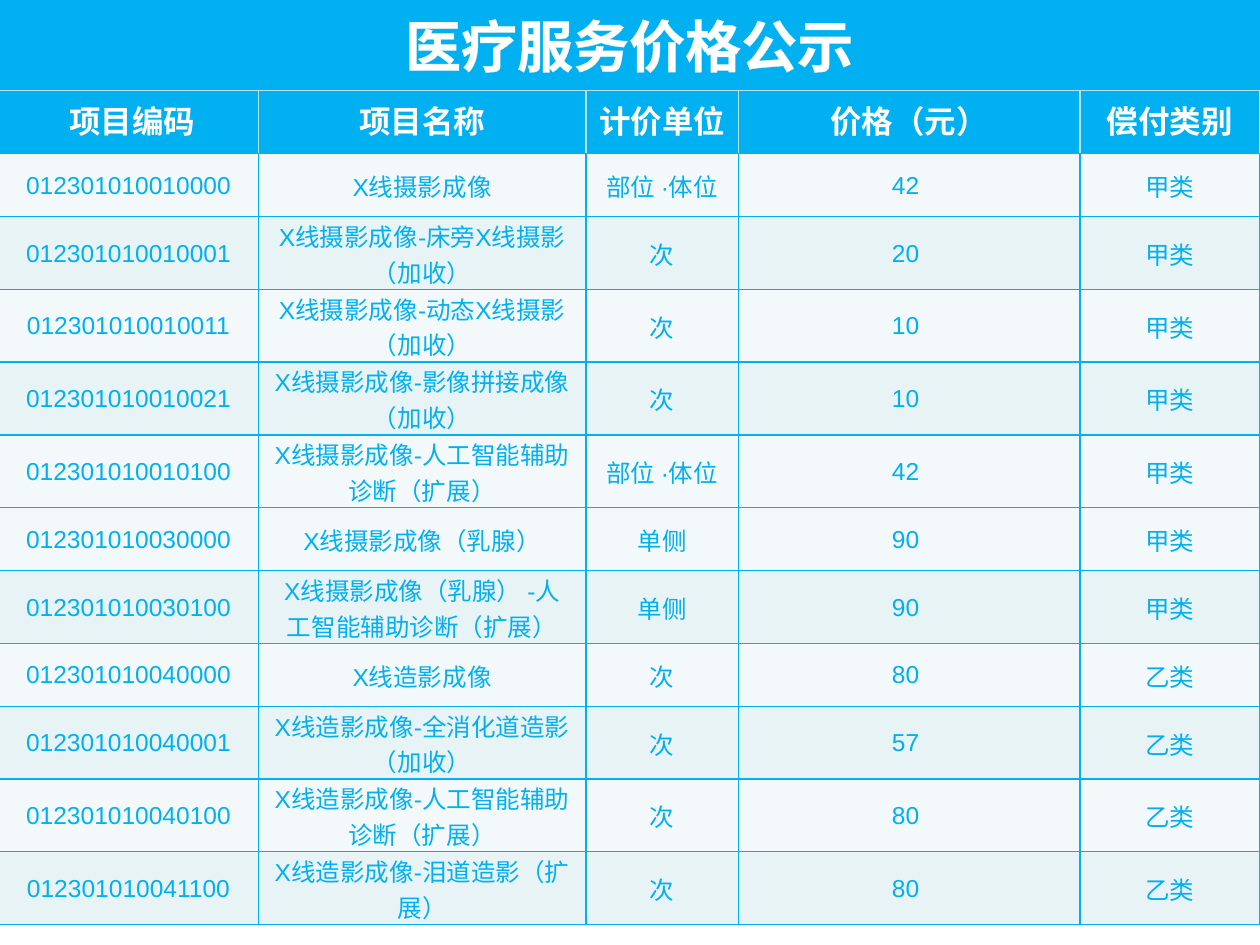
from lxml import etree
from pptx import Presentation
from pptx.dml.color import RGBColor
from pptx.enum import text
from pptx.oxml import ns
from pptx.util import Inches, Pt

COLORS = {"blue": "00B0F0", "white": "FFFFFF", "rule": "BBE0E3",
          "edge": "D9EDEE", "pale": "F3F9FA", "tint": "E7F3F4"}
TITLE = "医疗服务价格公示"
HEADS = [" 项目编码", "项目名称", "计价单位", "价格（元）", "偿付类别"]
# Row shading starts again with each group
GROUPS = [
    [
        ("012301010010000", "X线摄影成像", "部位 ·体位", "42 ", "甲类"),
        ("012301010010001", "X线摄影成像-床旁X线摄影\n（加收）", "次", "20 ", "甲类"),
        ("012301010010011", "X线摄影成像-动态X线摄影\n（加收）", "次", "10 ", "甲类"),
        ("012301010010021", "X线摄影成像-影像拼接成像\n（加收）", "次", "10 ", "甲类"),
        ("012301010010100", "X线摄影成像-人工智能辅助\n诊断（扩展）", "部位 ·体位", "42 ", "甲类"),
    ],
    [
        ("012301010030000", "X线摄影成像（乳腺）", "单侧", "90 ", "甲类"),
        ("012301010030100", "X线摄影成像（乳腺） -人\n工智能辅助诊断（扩展）", "单侧", "90 ", "甲类"),
        ("012301010040000", "X线造影成像", "次", "80 ", "乙类"),
        ("012301010040001", "X线造影成像-全消化道造影\n（加收）", "次", "57 ", "乙类"),
        ("012301010040100", "X线造影成像-人工智能辅助\n诊断（扩展）", "次", "80 ", "乙类"),
        ("012301010041100", "X线造影成像-泪道造影（扩\n展）", "次", "80 ", "乙类"),
    ],
]
WIDTHS = [2.06, 2.6, 1.21, 2.71, 1.43]
TITLE_H, ROW_H, TALL_H = 0.72, 0.5, 0.57


def rgb(name):
    return RGBColor.from_string(COLORS[name])


def add_line(parent, tag, color, width):
    line = etree.SubElement(parent, ns.qn(tag), w=str(Pt(width)))
    fill = etree.SubElement(line, ns.qn("a:solidFill"))
    etree.SubElement(fill, ns.qn("a:srgbClr"), val=COLORS[color])
    return line


def dress(cell, fill, **sides):
    """Border the cell in blue, save for the sides named, and fill it."""
    props = cell._tc.get_or_add_tcPr()
    for side in "LRTB":
        add_line(props, f"a:ln{side}", sides.get(side, "blue"), 1)
    cell.fill.solid()
    cell.fill.fore_color.rgb = rgb(fill)


def write(cell, words, size, color, bold):
    para = cell.text_frame.paragraphs[0]
    para.text = words
    para.alignment = text.PP_ALIGN.CENTER
    for run in para.runs:
        font = run.font
        font.name, font.size, font.bold = "Arial", Pt(size), bold
        font.color.rgb = rgb(color)
    return para


def main():
    deck = Presentation()
    deck.slide_width, deck.slide_height = Inches(10), Inches(7.5)
    slide = deck.slides.add_slide(deck.slide_layouts[6])

    items = [(row, ("pale", "tint")[i % 2])
             for group in GROUPS for i, row in enumerate(group)]
    heights = [TITLE_H, ROW_H] + [TALL_H if "\n" in row[1] else ROW_H
                                  for row, _ in items]
    table = slide.shapes.add_table(
        len(heights), len(WIDTHS), Inches(-0.01), 0,
        Inches(sum(WIDTHS)), Inches(sum(heights))).table
    for col, width in zip(table.columns, WIDTHS):
        col.width = Inches(width)
    for row, height in zip(table.rows, heights):
        row.height = Inches(height)

    for c, head in enumerate(HEADS):
        dress(table.cell(0, c), "blue", B="rule")
        cell = table.cell(1, c)
        dress(cell, "blue", L="rule", R="rule", T="rule")
        write(cell, head, 18, "white", True)

    banner = table.cell(0, 0)
    banner.merge(table.cell(0, len(HEADS) - 1))
    banner.vertical_anchor = text.MSO_ANCHOR.MIDDLE
    para = write(banner, TITLE, 32, "white", True)
    para.line_spacing = 0.9
    props = para.runs[0].font._element
    props.insert(0, add_line(props, "a:ln", "edge", 0.8))

    for r, (row, shade) in enumerate(items, 2):
        for c, words in enumerate(row):
            cell = table.cell(r, c)
            dress(cell, shade)
            cell.vertical_anchor = text.MSO_ANCHOR.MIDDLE
            cell.margin_left = cell.margin_right = cell.margin_top = Inches(0.01)
            cell.margin_bottom = 0
            write(cell, words, 14, "blue", False)

    deck.save("out.pptx")


if __name__ == "__main__":
    main()
